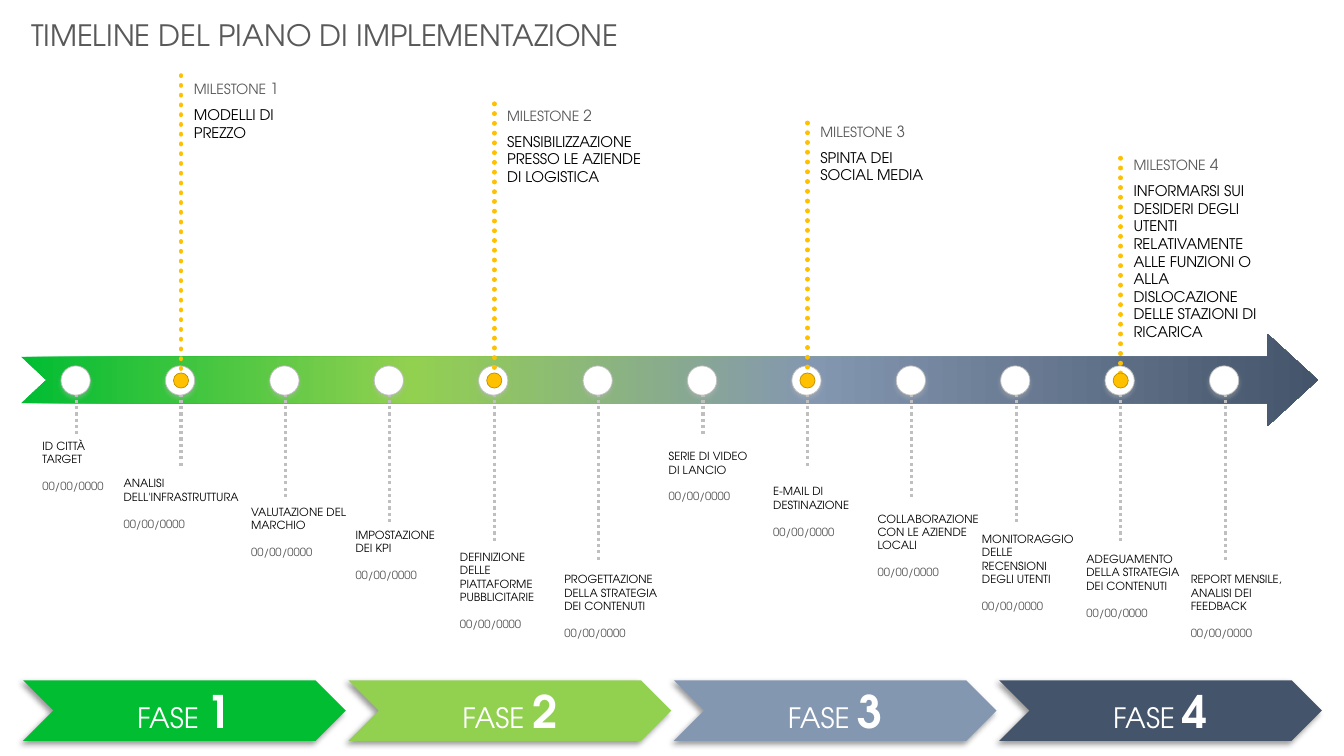
from lxml import etree
from pptx import Presentation
from pptx import util as u
from pptx.dml.color import RGBColor
from pptx.enum import dml, shapes, text
from pptx.oxml import ns

GREEN = RGBColor(0x00, 0xBD, 0x32)
LIME = RGBColor(0x92, 0xD0, 0x50)
STEEL = RGBColor(0x84, 0x97, 0xB0)
NAVY = RGBColor(0x44, 0x54, 0x6A)
GOLD = RGBColor(0xFF, 0xC0, 0x00)
DARK_GOLD = RGBColor(0xBF, 0x90, 0x00)
SILVER = RGBColor(0xBF, 0xBF, 0xBF)
GREY = RGBColor(0x59, 0x59, 0x59)
WHITE = RGBColor(0xFF, 0xFF, 0xFF)
BLACK = RGBColor(0x00, 0x00, 0x00)

FONT = "TeX Gyre Adventor"
FIRST_STEP, STEP_PITCH = 0.76, 1.0355
AXIS = 3.775
PHASE_PITCH = 3.227
PHASES = [GREEN, LIME, STEEL, NAVY]
STEM_LENGTHS = [0.55, 0.85, 1.15, 1.4, 1.6, 1.8]
PHASE_SHADOW = (BLACK, 40, 4, 3, 135)
MARKER_SHADOW = (SILVER, 35, 3.1, 1.8, 90)

TASKS = [
    ("ID CITTÀ TARGET", 0.34, 4.31, 0.8),
    ("ANALISI DELL'INFRASTRUTTURA", 0.57, 4.68, 1.38),
    ("VALUTAZIONE DEL MARCHIO", 0.34, 4.96, 1.04),
    ("IMPOSTAZIONE DEI KPI", 0.34, 5.19, 0.9),
    ("DEFINIZIONE DELLE PIATTAFORME PUBBLICITARIE", 0.34, 5.41, 0.97),
    ("PROGETTAZIONE DELLA STRATEGIA DEI CONTENUTI", 0.34, 5.63, 1.06),
    ("SERIE DI VIDEO DI LANCIO", 0.34, 4.41, 0.8),
    ("E-MAIL DI DESTINAZIONE", 0.34, 4.76, 0.97),
    ("COLLABORAZIONE CON LE AZIENDE LOCALI", 0.34, 5.03, 1.13),
    ("MONITORAGGIO DELLE RECENSIONI DEGLI UTENTI", 0.34, 5.23, 0.97),
    ("ADEGUAMENTO DELLA STRATEGIA DEI CONTENUTI", 0.34, 5.43, 0.97),
    ("REPORT MENSILE, ANALISI DEI FEEDBACK", 0.34, 5.63, 0.97),
]
MILESTONES = [
    ("MODELLI DI PREZZO", 0.75, 0.74, 1.48, 2.5),
    ("SENSIBILIZZAZIONE PRESSO LE AZIENDE DI LOGISTICA", 1.03, 1.0, 1.65, 2.44),
    ("SPINTA DEI SOCIAL MEDIA", 1.22, 1.16, 1.37, 2.05),
    ("INFORMARSI SUI DESIDERI DEGLI UTENTI RELATIVAMENTE ALLE FUNZIONI O ALLA "
     "DISLOCAZIONE DELLE STAZIONI DI RICARICA", 1.57, 1.49, 1.48, 1.73),
]


def apply(target, values):
    for name, value in values.items():
        setattr(target, name, value)


def step_x(index):
    return FIRST_STEP + index * STEP_PITCH


def add_child(parent, tag, **attributes):
    child = etree.SubElement(parent, ns.qn(tag))
    for name, value in attributes.items():
        child.set(name, str(value))
    return child


def add_run(paragraph, wording, size, color, bold=False):
    run = paragraph.add_run()
    run.text = wording
    apply(run.font, {"name": FONT, "size": u.Pt(size), "bold": bold})
    run.font.color.rgb = color


def add_text(slide, left, top, width, height, margins=None):
    box = slide.shapes.add_textbox(*map(u.Inches, (left, top, width, height)))
    apply(box.text_frame, {"word_wrap": True, **(margins or {})})
    return box.text_frame


def add_filled(slide, preset, left, top, width, height, fill, outline=None, shadow=None):
    shape = slide.shapes.add_shape(preset, *map(u.Inches, (left, top, width, height)))
    shape.fill.solid()
    shape.fill.fore_color.rgb = fill
    if outline:
        shape.line.color.rgb = outline
        shape.line.width = u.Pt(0.5)
    else:
        shape.line.fill.background()
    shape.shadow.inherit = False
    if shadow:
        color, alpha, blur, distance, angle = shadow
        effects = shape._element.spPr.find(ns.qn("a:effectLst"))
        outer = add_child(effects, "a:outerShdw", blurRad=u.Pt(blur), dist=u.Pt(distance),
                          dir=angle * 60000, algn="t", rotWithShape=0)
        add_child(add_child(outer, "a:srgbClr", val=color), "a:alpha", val=alpha * 1000)
    return shape


def add_dotted(slide, x, top, bottom, color, width, cap):
    stem = slide.shapes.add_connector(
        shapes.MSO_CONNECTOR.STRAIGHT, *map(u.Inches, (x, top, x, bottom)))
    stem.line.color.rgb = color
    apply(stem.line, {"width": u.Pt(width), "dash_style": dml.MSO_LINE.ROUND_DOT})
    stem.line._get_or_add_ln().set("cap", cap)
    add_child(stem._element.spPr, "a:effectLst")


def add_dot(slide, x, diameter, fill, outline, shadow=None):
    add_filled(slide, shapes.MSO_SHAPE.OVAL, x - diameter / 2, AXIS - diameter / 2,
               diameter, diameter, fill, outline, shadow)


def add_phase(slide, index, color):
    phase = add_filled(slide, shapes.MSO_SHAPE.CHEVRON, 0.23 + index * PHASE_PITCH, 6.75,
                       3.2, 0.6, color, shadow=PHASE_SHADOW)
    phase.text_frame.vertical_anchor = text.MSO_ANCHOR.MIDDLE
    label = phase.text_frame.paragraphs[0]
    label.alignment = text.PP_ALIGN.CENTER
    add_run(label, "FASE ", 20, WHITE)
    add_run(label, str(index + 1), 32, WHITE, bold=True)


def add_axis(slide):
    axis = add_filled(slide, shapes.MSO_SHAPE.NOTCHED_RIGHT_ARROW, 0.21, 3.31, 12.86, 0.92, GREEN)
    axis.adjustments[0] = 0.5
    axis.adjustments[1] = 0.545
    axis.fill.gradient()
    axis.fill.gradient_angle = 0
    stops = axis._element.spPr.find(ns.qn("a:gradFill")).find(ns.qn("a:gsLst"))
    for stop in list(stops):
        stops.remove(stop)
    for position, color in zip((0, 30, 61, 100), PHASES):
        add_child(add_child(stops, "a:gs", pos=position * 1000), "a:srgbClr", val=color)


def add_task(slide, index, name, offset, top, width):
    margins = {"margin_left": 0, "margin_right": 0,
               "margin_top": u.Inches(0.05), "margin_bottom": u.Inches(0.01)}
    task = add_text(slide, step_x(index) - offset, top, width, 0.9, margins)
    add_run(task.paragraphs[0], name, 8, BLACK)
    date = task.add_paragraph()
    date.space_before = u.Pt(9.6)
    add_run(date, "00/00/0000", 8, GREY)


def add_milestone(slide, index, name, stem_top, label_top, width, height):
    x = step_x(1 + 3 * index)
    add_dotted(slide, x, stem_top, 3.77, GOLD, 3.5, "rnd")
    add_dot(slide, x, 0.15, GOLD, DARK_GOLD)
    label = add_text(slide, x + 0.03, label_top, 1.17, 0.26).paragraphs[0]
    for wording, size in (("MILESTONE", 10), (" ", 10.5), (str(index + 1), 11)):
        add_run(label, wording, size, GREY)
    goal = add_text(slide, x + 0.03, label_top + 0.265, width, height)
    add_run(goal.paragraphs[0], name, 10.5, BLACK)


def main():
    deck = Presentation()
    apply(deck, {"slide_width": u.Inches(13.33), "slide_height": u.Inches(7.5)})
    slide = deck.slides.add_slide(deck.slide_layouts[6])
    for index, color in enumerate(PHASES):
        add_phase(slide, index, color)
    add_axis(slide)
    for index in range(len(TASKS)):
        length = STEM_LENGTHS[index % len(STEM_LENGTHS)]
        add_dotted(slide, step_x(index), 3.78, 3.78 + length, SILVER, 2.25, "flat")
    for index in range(len(TASKS)):
        add_dot(slide, step_x(index) - 0.01, 0.29, WHITE, SILVER, MARKER_SHADOW)
    for index, task in enumerate(TASKS):
        add_task(slide, index, *task)
    for index, milestone in enumerate(MILESTONES):
        add_milestone(slide, index, *milestone)
    title = add_text(slide, 0.21, 0.12, 9.2, 0.45)
    add_run(title.paragraphs[0], "TIMELINE DEL PIANO DI IMPLEMENTAZIONE", 21, GREY)
    deck.save("out.pptx")


if __name__ == "__main__":
    main()
